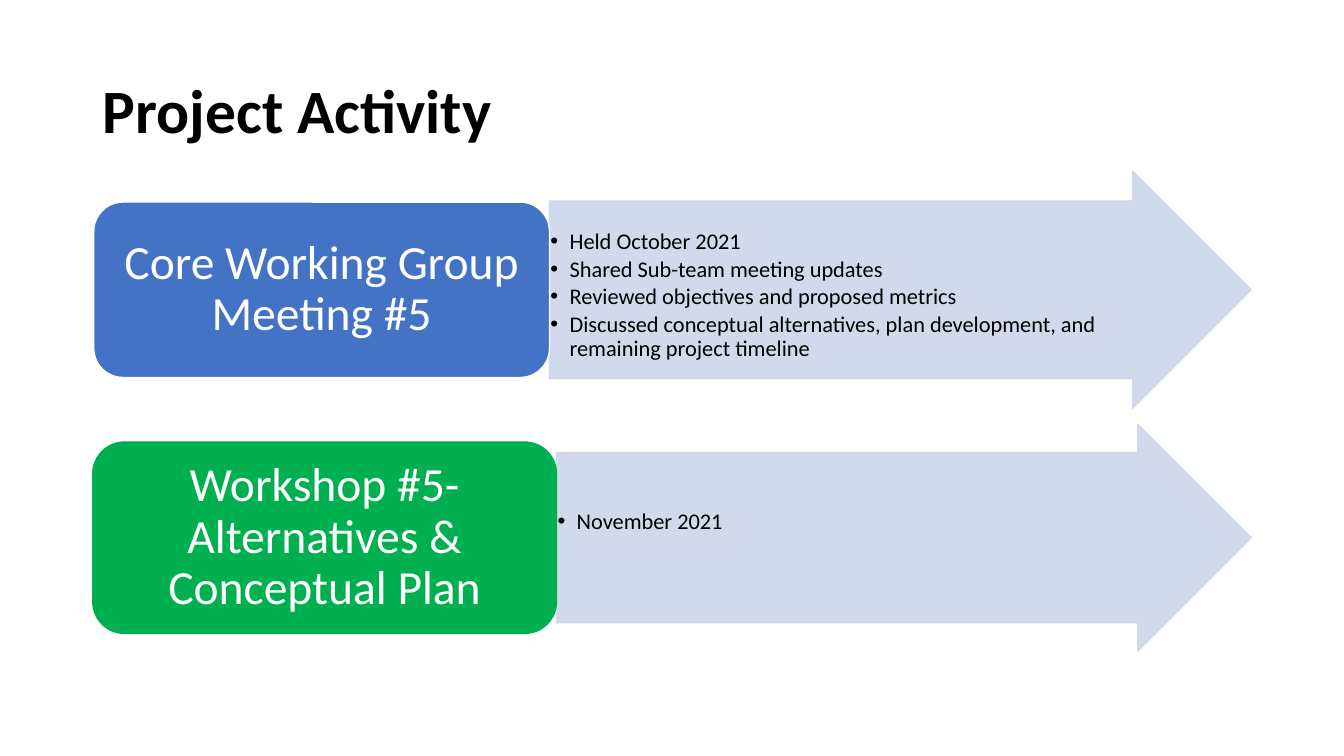
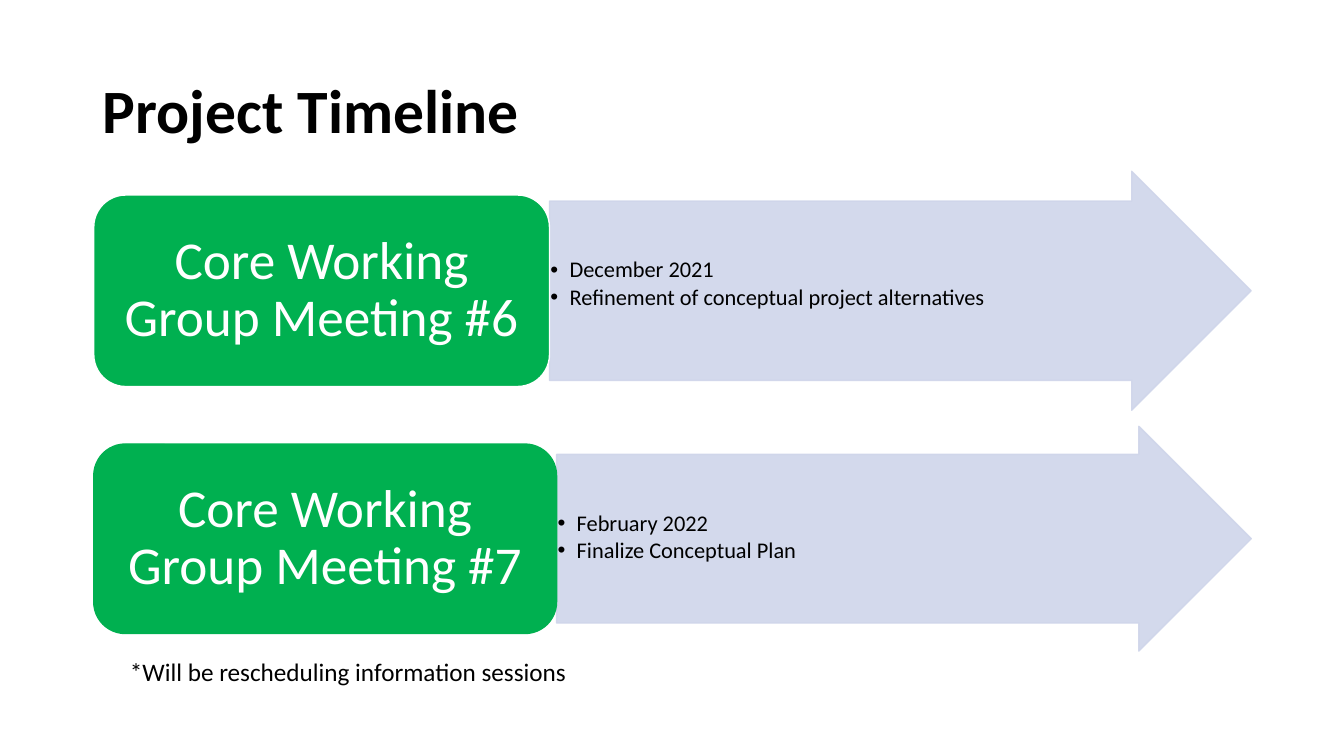
from dataclasses import dataclass

from lxml.etree import SubElement
from pptx import Presentation
from pptx.dml.color import RGBColor
from pptx.enum.shapes import MSO_SHAPE as Shape
from pptx.enum.text import MSO_ANCHOR as Anchor, MSO_AUTO_SIZE as AutoSize, PP_ALIGN as Align
from pptx.oxml.ns import qn
from pptx.util import Inches, Pt


@dataclass(frozen=True)
class Theme:
    font: str = "Calibri"
    black: str = "000000"
    white: str = "FFFFFF"
    blue: str = "4472C4"
    green: str = "00B050"
    pale: str = "CFD5EA"
    pale_opacity: int = 90
    title_size: int = 44
    list_size: int = 16
    note_size: int = 18
    tight: float = 0.9


@dataclass(frozen=True)
class Activity:
    """One row: a label box and the arrow that leaves its right side."""
    label: str
    details: tuple
    left: float
    top: float
    height: float
    box_width: float
    box_height: float
    fill: str
    outline: str
    label_size: int
    list_drop: float


THEME = Theme()
ARROW_RIGHT = 12.41


def rgb(value):
    return RGBColor.from_string(value)


def style_text(paragraph, size, color, bold=False, spacing=None):
    if spacing:
        paragraph.line_spacing = spacing
    for run in paragraph.runs:
        font = run.font
        font.name, font.size, font.bold = THEME.font, Pt(size), bold
        font.color.rgb = rgb(color)


def set_margins(frame, left, top, right, bottom):
    frame.margin_left, frame.margin_top = Inches(left), Inches(top)
    frame.margin_right, frame.margin_bottom = Inches(right), Inches(bottom)


def add_panel(slide, kind, left, top, width, height, fill, outline):
    panel = slide.shapes.add_shape(
        kind, Inches(left), Inches(top), Inches(width), Inches(height))
    panel.shadow.inherit = False
    panel.fill.solid()
    panel.fill.fore_color.rgb = rgb(fill)
    panel.line.color.rgb = rgb(outline)
    panel.line.width = Pt(1)
    panel.text_frame.word_wrap = True
    return panel


def set_opacity(panel, percent):
    for color in panel.element.spPr.iter(qn("a:srgbClr")):
        SubElement(color, qn("a:alpha"), val=str(percent * 1000))


def add_bullet(paragraph, indent=0.19):
    props = paragraph._p.get_or_add_pPr()
    props.set("marL", str(Inches(indent)))
    props.set("indent", str(-Inches(indent)))
    SubElement(props, qn("a:buFont"), typeface="Arial")
    SubElement(props, qn("a:buChar"), char="•")


def add_detail_arrow(slide, left, top, width, height, details, list_drop):
    arrow = add_panel(slide, Shape.RIGHT_ARROW, left, top, width, height,
                      THEME.pale, THEME.pale)
    arrow.adjustments[0], arrow.adjustments[1] = 0.75, 0.5
    set_opacity(arrow, THEME.pale_opacity)
    frame = arrow.text_frame
    frame.vertical_anchor = Anchor.TOP
    set_margins(frame, 0.01, list_drop, 0.01, 0.01)
    frame.text = "\n".join(details)
    for item in frame.paragraphs:
        add_bullet(item)
        item.alignment = Align.LEFT
        item.space_after = Pt(0.15 * THEME.list_size)
        style_text(item, THEME.list_size, THEME.black, spacing=THEME.tight)


def add_label_box(slide, left, top, width, height, activity):
    box = add_panel(slide, Shape.ROUNDED_RECTANGLE, left, top, width, height,
                    activity.fill, activity.outline)
    frame = box.text_frame
    frame.vertical_anchor = Anchor.MIDDLE
    set_margins(frame, 0.14, 0.07, 0.14, 0.07)
    frame.text = activity.label
    label = frame.paragraphs[0]
    label.alignment = Align.CENTER
    style_text(label, activity.label_size, THEME.white, spacing=THEME.tight)


def add_activity(slide, activity):
    # The arrow starts at the box's right side; both share a centre line
    arrow_left = activity.left + activity.box_width
    add_detail_arrow(slide, arrow_left, activity.top, ARROW_RIGHT - arrow_left,
                     activity.height, activity.details, activity.list_drop)
    box_top = activity.top + (activity.height - activity.box_height) / 2
    add_label_box(slide, activity.left, box_top, activity.box_width,
                  activity.box_height, activity)


def add_title(slide, text):
    title = slide.shapes.title
    title.left, title.top = Inches(0.92), Inches(0.4)
    title.width, title.height = Inches(11.5), Inches(1.45)
    frame = title.text_frame
    frame.text = text
    frame.auto_size = AutoSize.NONE
    frame.vertical_anchor = Anchor.MIDDLE
    heading = frame.paragraphs[0]
    heading.alignment = Align.LEFT
    style_text(heading, THEME.title_size, THEME.black, True, THEME.tight)


def add_note(slide, left, top, width, height, text):
    note = slide.shapes.add_textbox(
        Inches(left), Inches(top), Inches(width), Inches(height))
    note.text_frame.word_wrap = True
    note.text_frame.text = text
    style_text(note.text_frame.paragraphs[0], THEME.note_size, THEME.black)


def add_activity_slide(deck, title, activities):
    slide = deck.slides.add_slide(deck.slide_layouts.get_by_name("Title Only"))
    add_title(slide, title)
    for activity in activities:
        add_activity(slide, activity)
    return slide


def main():
    deck = Presentation()
    deck.slide_width, deck.slide_height = Inches(13.33), Inches(7.5)

    # Recent activity
    add_activity_slide(deck, "Project Activity", [
        Activity("Core Working Group Meeting #5",
                 ("Held October 2021",
                  "Shared Sub-team meeting updates",
                  "Reviewed objectives and proposed metrics",
                  "Discussed conceptual alternatives, plan development, "
                  "and remaining project timeline"),
                 0.93, 1.7, 2.35, 4.52, 1.74, THEME.blue, THEME.white, 34, 0.29),
        Activity("Workshop #5- Alternatives & Conceptual Plan",
                 ("November 2021",),
                 0.92, 4.21, 2.25, 4.6, 1.9, THEME.green, THEME.green, 34, 0.57),
    ])

    # Upcoming meetings
    timeline = add_activity_slide(deck, "Project Timeline", [
        Activity("Core Working Group Meeting #6",
                 ("December 2021", "Refinement of conceptual project alternatives"),
                 0.93, 1.7, 2.37, 4.52, 1.9, THEME.green, THEME.white, 38, 0.57),
        Activity("Core Working Group Meeting #7",
                 ("February 2022", "Finalize Conceptual Plan"),
                 0.93, 4.23, 2.23, 4.59, 1.88, THEME.green, THEME.green, 38, 0.57),
    ])
    add_note(timeline, 1.19, 6.46, 6.7, 0.4,
             "*Will be rescheduling information sessions")

    deck.save("out.pptx")


if __name__ == "__main__":
    main()
